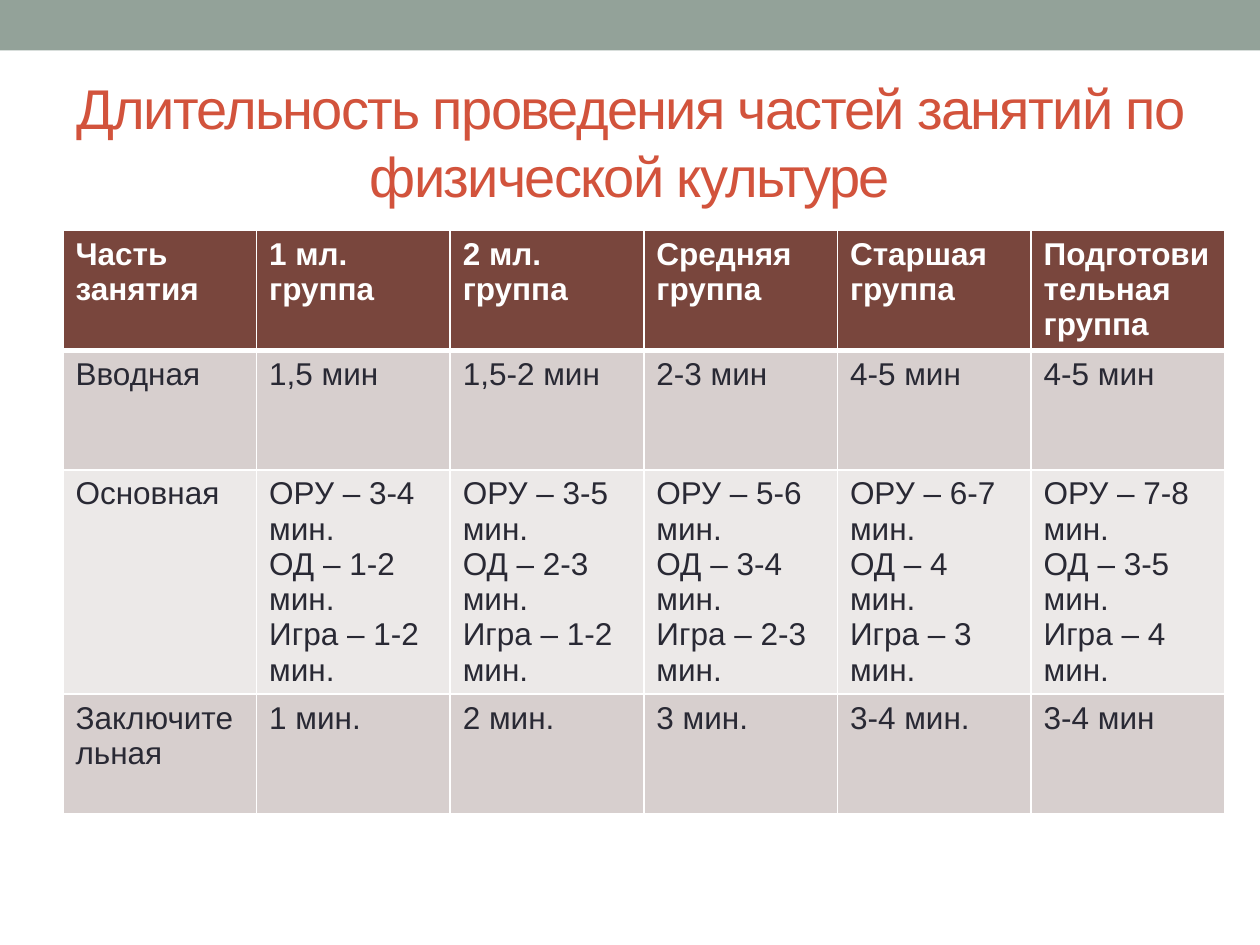
from pptx import Presentation
from pptx.dml.color import RGBColor
from pptx.enum.shapes import MSO_SHAPE as Shape
from pptx.enum.text import MSO_ANCHOR as Anchor, PP_ALIGN as Align
from pptx.oxml import parse_xml
from pptx.oxml.ns import nsdecls
from pptx.util import Emu, Pt

EMU_PER_PX = 9144  # 100 px to the inch
FONT = "Arial"
WHITE = RGBColor(0xFF, 0xFF, 0xFF)
SAGE = RGBColor(0x93, 0xA2, 0x99)
RED = RGBColor(0xD2, 0x53, 0x3C)
BROWN = RGBColor(0x79, 0x46, 0x3D)
INK = RGBColor(0x29, 0x29, 0x34)
BAND_DARK = RGBColor(0xD7, 0xCF, 0xCE)
BAND_LIGHT = RGBColor(0xEC, 0xE9, 0xE8)

HEADERS = ["Часть занятия", "1 мл. группа", "2 мл. группа", "Средняя группа",
           "Старшая группа", "Подготовительная группа"]
INTRO = ["1,5 мин", "1,5-2 мин", "2-3 мин", "4-5 мин", "4-5 мин"]
MAIN_PARTS = [("3-4", "1-2", "1-2"), ("3-5", "2-3", "1-2"), ("5-6", "3-4", "2-3"),
              ("6-7", "4", "3"), ("7-8", "3-5", "4")]
FINAL = ["1 мин.", "2 мин.", "3 мин.", "3-4 мин.", "3-4 мин"]


def px(*lengths):
    return [Emu(length * EMU_PER_PX) for length in lengths]


class SlideBuilder:
    def __init__(self, deck):
        self.slide = deck.slides.add_slide(deck.slide_layouts[5])

    def add_run(self, paragraph, text, size, color, bold=False):
        run = paragraph.add_run()
        run.text = text
        font = run.font
        font.name, font.size, font.bold = FONT, Pt(size), bold
        font.color.rgb = color
        return run

    def bar(self, box, color):
        bar = self.slide.shapes.add_shape(Shape.RECTANGLE, *px(*box))
        bar.shadow.inherit = False
        bar.fill.solid()
        bar.fill.fore_color.rgb = color
        bar.line.fill.background()

    def title(self, text, box):
        title = self.slide.shapes.title
        title.left, title.top, title.width, title.height = px(*box)
        frame = title.text_frame
        frame.word_wrap = True
        frame.vertical_anchor = Anchor.MIDDLE
        paragraph = frame.paragraphs[0]
        paragraph.alignment = Align.CENTER
        run = self.add_run(paragraph, text, 32, RED)
        run.font._element.set("spc", "-100")

    def borders(self, cell, top=1, bottom=1):
        """Draw white cell borders; widths are in points."""
        properties = cell._tc.get_or_add_tcPr()
        for side, width in (("L", 1), ("R", 1), ("T", top), ("B", bottom)):
            properties.append(parse_xml(
                f'<a:ln{side} {nsdecls("a")} w="{Pt(width)}"><a:solidFill>'
                f'<a:srgbClr val="{WHITE}"/></a:solidFill></a:ln{side}>'))

    def cell(self, cell, lines, fill, color, bold):
        cell.fill.solid()
        cell.fill.fore_color.rgb = fill
        frame = cell.text_frame
        for number, line in enumerate(lines):
            paragraph = frame.add_paragraph() if number else frame.paragraphs[0]
            self.add_run(paragraph, line, 18, color, bold)

    def table(self, rows, box):
        """Fill a table from rows of cells, each cell a list of lines."""
        table = self.slide.shapes.add_table(len(rows), len(rows[0]), *px(*box)).table
        for r, row in enumerate(rows):
            header = r == 0
            fill = BROWN if header else BAND_DARK if r % 2 else BAND_LIGHT
            for c, lines in enumerate(row):
                cell = table.cell(r, c)
                self.borders(cell, top=3 if r == 1 else 1, bottom=3 if header else 1)
                self.cell(cell, lines, fill, WHITE if header else INK, header)


def single_lines(texts):
    return [[text] for text in texts]


def main():
    deck = Presentation()
    deck.slide_width, deck.slide_height = px(1000, 750)
    builder = SlideBuilder(deck)
    builder.bar((0, 0, 1000, 40), SAGE)
    builder.title("Длительность проведения частей занятий по физической культуре",
                  (50, 58, 900, 108))
    main_cells = [[f"ОРУ – {warmup} мин.", f"ОД – {moves} мин.", f"Игра – {game} мин."]
                  for warmup, moves, game in MAIN_PARTS]
    builder.table([single_lines(HEADERS),
                   single_lines(["Вводная", *INTRO]),
                   [["Основная"], *main_cells],
                   single_lines(["Заключительная", *FINAL])],
                  (50, 183, 922, 380))
    deck.save("out.pptx")


if __name__ == "__main__":
    main()
